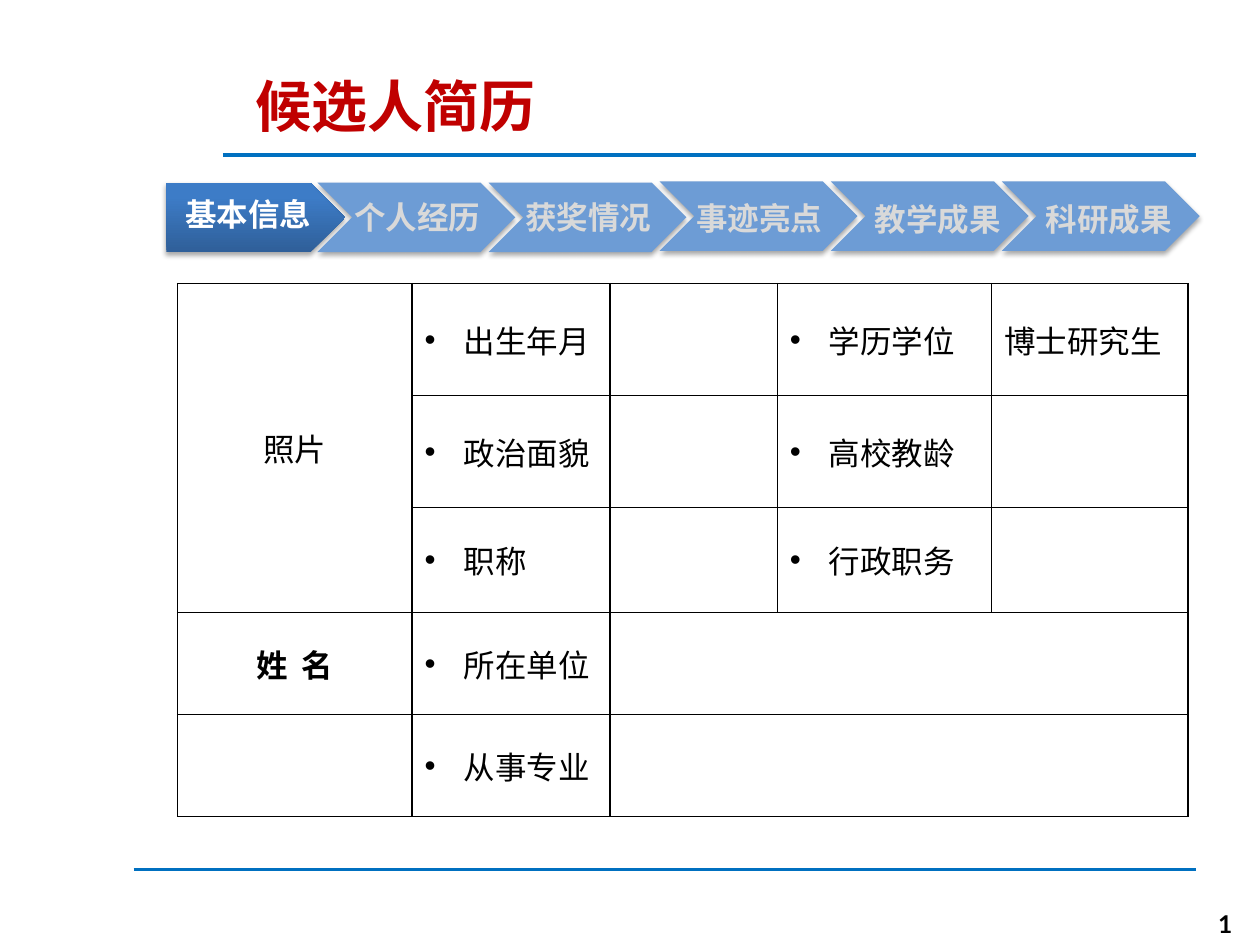
import pptx
import pptx.util
import pptx.dml.color
import pptx.enum.shapes
import pptx.enum.text
import pptx.oxml.ns
import lxml.etree

COLS, ROWS = 100, 75  # the slide's grid: ten cells to the inch
SHAPE = pptx.enum.shapes.MSO_SHAPE
ALIGN = pptx.enum.text.PP_ALIGN
ANCHOR = pptx.enum.text.MSO_ANCHOR

HUES = {
    "red": "C00000", "rule": "0070C0", "step": "6D9CD5", "pale": "D9D9D9",
    "deep": "2F5F99", "bright": "3D7CC7", "white": "FFFFFF", "black": "000000",
}
TITLE = {"size": 32, "name": "Arial", "hue": "red", "bold": True}
ACTIVE = {"size": 18, "name": "Noto Sans CJK SC", "hue": "white", "bold": True}
STEP = {"size": 18, "name": "Arial", "hue": "pale", "bold": True}
BODY = {"size": 18, "name": "Arial", "hue": "black", "bold": False}
NUMBER = {"size": 14, "name": "Lato", "hue": "black", "bold": True}

# label, top of the chevron, label's offset from the chevron
STEPS = [
    ("个人经历", 14.5, 1.2, 0.7),
    ("获奖情况", 14.5, 1.2, 0.7),
    ("事迹亮点", 14.4, 1.2, 0.9),
    ("教学成果", 14.4, 1.8, 1),
    ("科研成果", 14.4, 1.8, 1),
]
WIDTHS = [18.6, 15.7, 13.3, 17, 15.6]
HEIGHTS = [8.9, 8.9, 8.3, 8.1, 8.1]
FIELDS = [
    ["照片", "出生年月", "", "学历学位", "博士研究生"],
    ["", "政治面貌", "", "高校教龄", ""],
    ["", "职称", "", "行政职务", ""],
    ["姓  名", "所在单位", "", "", ""],
    ["", "从事专业", "", "", ""],
]
MERGES = [((0, 0), (2, 0)), ((3, 2), (3, 4)), ((4, 2), (4, 4))]


def grid(*cells):
    return [pptx.util.Inches(cell / 10) for cell in cells]


def tint(hue):
    return pptx.dml.color.RGBColor.from_string(HUES[hue])


def add_node(parent, tag, **attrs):
    node = lxml.etree.SubElement(parent, pptx.oxml.ns.qn(tag))
    for key, value in attrs.items():
        node.set(key, str(value))
    return node


def style(font, form):
    values = {**form, "size": pptx.util.Pt(form["size"])}
    font.color.rgb = tint(values.pop("hue"))
    for key, value in values.items():
        setattr(font, key, value)


def write(para, text, form, align=ALIGN.LEFT):
    para.alignment = align
    run = para.add_run()
    run.text = text
    style(run.font, form)


def add_text(slide, place, text, form, align=ALIGN.LEFT, anchor=ANCHOR.TOP):
    frame = slide.shapes.add_textbox(*grid(*place)).text_frame
    frame.word_wrap = True
    frame.vertical_anchor = anchor
    write(frame.paragraphs[0], text, form, align)


def add_rule(slide, left, right, top):
    line = slide.shapes.add_connector(
        pptx.enum.shapes.MSO_CONNECTOR.STRAIGHT, *grid(left, top, right, top))
    line.line.color.rgb = tint("rule")
    line.line.width = pptx.util.Pt(2)
    add_node(line._element.spPr, "a:effectLst")


def add_arrow(slide, kind, place):
    """Add a borderless block with a soft shadow below it."""
    arrow = slide.shapes.add_shape(kind, *grid(*place))
    arrow.line.fill.background()
    arrow.fill.solid()
    arrow.fill.fore_color.rgb = tint("step")
    arrow.shadow.inherit = False
    effects = arrow._element.spPr.find(pptx.oxml.ns.qn("a:effectLst"))
    shade = add_node(effects, "a:outerShdw", blurRad=pptx.util.Pt(3.1),
                     dist=pptx.util.Pt(1.8), dir=5400000, rotWithShape=0)
    color = add_node(shade, "a:srgbClr", val=HUES["black"])
    add_node(color, "a:alpha", val=35000)
    return arrow


def add_steps(slide):
    plate = add_arrow(slide, SHAPE.PENTAGON, (13.2, 14.5, 14.2, 5.5))
    plate.fill.gradient()
    plate.fill.gradient_angle = 90
    stops = plate.fill.gradient_stops
    for stop, hue, point in zip(stops, ("deep", "bright"), (0, 0.8)):
        stop.color.rgb = tint(hue)
        stop.position = point
    add_text(slide, (13, 15, 13.4, 4), "基本信息", ACTIVE, ALIGN.CENTER)
    for index, (label, top, right, down) in enumerate(STEPS):
        left = 25.2 + 13.58 * index
        add_arrow(slide, SHAPE.CHEVRON, (left, top, 15.7, 5.5))
        add_text(slide, (left + right, top + down, 13.4, 4), label, STEP,
                 ALIGN.CENTER)


def add_edges(cell):
    props = cell._tc.get_or_add_tcPr()
    for side in ("a:lnL", "a:lnR", "a:lnT", "a:lnB"):
        edge = add_node(props, side, w=pptx.util.Pt(1))
        fill = add_node(edge, "a:solidFill")
        add_node(fill, "a:srgbClr", val=HUES["black"])


def add_bullet(para):
    props = para._p.get_or_add_pPr()
    dent = pptx.util.Inches(0.31)
    props.set("marL", str(dent))
    props.set("indent", str(-dent))
    add_node(props, "a:buFont", typeface="Arial")
    add_node(props, "a:buChar", char="•")


def fill_cell(cell, text, col, bold):
    add_edges(cell)
    cell.fill.background()
    cell.vertical_anchor = ANCHOR.MIDDLE
    if not text:
        return
    para = cell.text_frame.paragraphs[0]
    if col in (1, 3):
        add_bullet(para)
    align = ALIGN.CENTER if col == 0 else ALIGN.LEFT
    write(para, text, {**BODY, "bold": bold}, align)


def add_form(slide):
    place = grid(14.1, 22.5, sum(WIDTHS), sum(HEIGHTS))
    table = slide.shapes.add_table(len(HEIGHTS), len(WIDTHS), *place).table
    table.first_row = table.horz_banding = False
    for part, width in zip(table.columns, grid(*WIDTHS)):
        part.width = width
    for part, height in zip(table.rows, grid(*HEIGHTS)):
        part.height = height
    for row, texts in enumerate(FIELDS):
        for col, text in enumerate(texts):
            fill_cell(table.cell(row, col), text, col, (row, col) == (3, 0))
    for first, last in MERGES:
        table.cell(*first).merge(table.cell(*last))


def main():
    deck = pptx.Presentation()
    deck.slide_width, deck.slide_height = grid(COLS, ROWS)
    slide = deck.slides.add_slide(deck.slide_layouts[6])
    add_text(slide, (19.3, 5.2, 77.2, 6.4), "候选人简历", TITLE)
    add_rule(slide, 17.7, 94.9, 12.3)
    add_steps(slide)
    add_form(slide)
    add_rule(slide, 10.6, 94.9, 69)
    add_text(slide, (75.5, 71.3, 23.3, 4), "1", NUMBER, ALIGN.RIGHT,
             ANCHOR.MIDDLE)
    deck.save("out.pptx")


if __name__ == "__main__":
    main()
